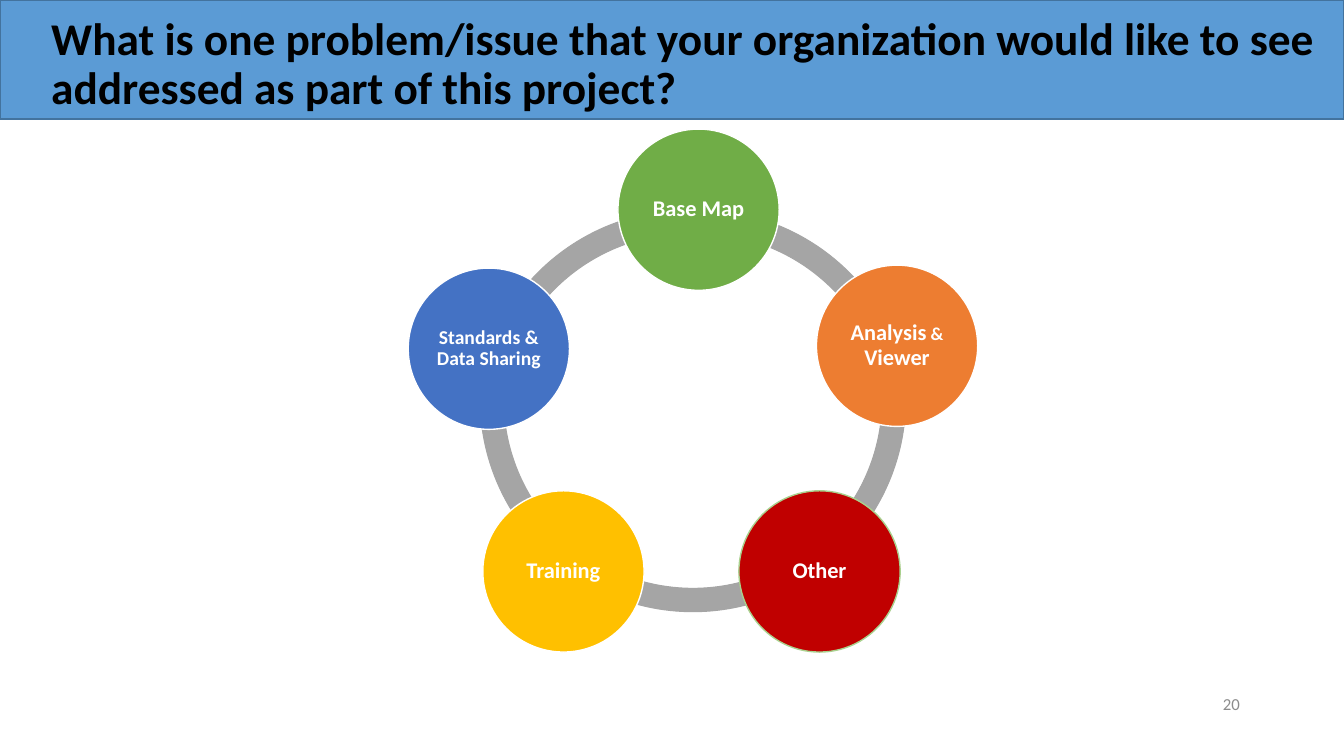
"""Build a slide with a ring of five project topics under a title band."""
from dataclasses import dataclass

from pptx import Presentation
from pptx.dml.color import RGBColor
from pptx.enum.shapes import MSO_SHAPE as Shape
from pptx.enum.text import MSO_ANCHOR as Anchor, PP_ALIGN as Align
from pptx.util import Pt

WHITE = RGBColor(0xFF, 0xFF, 0xFF)
BLACK = RGBColor(0x00, 0x00, 0x00)
GRAY = RGBColor(0x8C, 0x8C, 0x8C)
RING = RGBColor(0xA5, 0xA5, 0xA5)
BAND = RGBColor(0x5B, 0x9B, 0xD5)
BAND_LINE = RGBColor(0x43, 0x73, 0x9E)
ORANGE = RGBColor(0xED, 0x7D, 0x31)
RED = RGBColor(0xC0, 0x00, 0x00)
PALE_GREEN = RGBColor(0xA9, 0xD1, 0x8E)
GOLD = RGBColor(0xFF, 0xC0, 0x00)
BLUE = RGBColor(0x44, 0x72, 0xC4)
GREEN = RGBColor(0x70, 0xAD, 0x47)

RING_RADIUS = 152
RING_THICKNESS = 0.055
TOPIC_SIZE = 115.2


@dataclass
class Arc:
    """A ring segment: centre and clockwise angles in degrees."""
    cx: float
    cy: float
    start: float
    end: float


@dataclass
class Topic:
    """A labelled circle; each run is a text and its size."""
    left: float
    top: float
    fill: RGBColor
    runs: list[tuple[str, float]]
    line: RGBColor = WHITE


ARCS = [
    Arc(495, 285, 140, 180),
    Arc(495, 285, 65, 115),
    Arc(495, 285, 0, 40),
    Arc(499, 302, 285, 322),
    Arc(492, 302, 218, 255),
]
TOPICS = [
    Topic(583.2, 189.4, ORANGE, [("Analysis", 16), (" & ", 13), ("Viewer", 16)]),
    Topic(527.8, 350.6, RED, [("Other", 16)], PALE_GREEN),
    Topic(344.9, 350.6, GOLD, [("Training", 16)]),
    Topic(291.6, 191.5, BLUE, [("Standards & Data Sharing", 14)]),
    Topic(441.4, 92.2, GREEN, [("Base Map", 16)]),
]


def set_attrs(obj, values: dict) -> None:
    """Set every named attribute on an object."""
    for name, value in values.items():
        setattr(obj, name, value)


def add_shape(s, kind, box: tuple, fill: RGBColor, line: RGBColor, width: float):
    """Add a filled and outlined preset shape."""
    sp = s.shapes.add_shape(kind, *map(Pt, box))
    sp.shadow.inherit = False
    sp.fill.solid()
    sp.fill.fore_color.rgb = fill
    sp.line.color.rgb = line
    sp.line.width = Pt(width)
    return sp


def write(sp, runs: list, color: RGBColor, bold: bool, frame: dict, para: dict) -> None:
    """Write one paragraph of runs into a shape."""
    tf = sp.text_frame
    set_attrs(tf, {"word_wrap": True, "vertical_anchor": Anchor.MIDDLE, **frame})
    p = tf.paragraphs[0]
    set_attrs(p, para)
    for text, size in runs:
        r = p.add_run()
        r.text = text
        set_attrs(r.font, {"name": "Calibri", "size": Pt(size), "bold": bold})
        r.font.color.rgb = color


def add_text(s, box: tuple, text: str, size: float, color: RGBColor, bold: bool, para: dict) -> None:
    """Add a text box with one run."""
    sp = s.shapes.add_textbox(*map(Pt, box))
    write(sp, [(text, size)], color, bold, {}, para)


def add_arc(s, arc: Arc) -> None:
    """Add one segment of the ring."""
    size = 2 * RING_RADIUS
    box = (arc.cx - RING_RADIUS, arc.cy - RING_RADIUS, size, size)
    sp = add_shape(s, Shape.BLOCK_ARC, box, RING, RING, 0.75)
    for i, value in enumerate((arc.start * 0.6, arc.end * 0.6, RING_THICKNESS)):
        sp.adjustments[i] = value


def add_topic(s, topic: Topic) -> None:
    """Add one labelled circle."""
    box = (topic.left, topic.top, TOPIC_SIZE, TOPIC_SIZE)
    sp = add_shape(s, Shape.OVAL, box, topic.fill, topic.line, 1)
    margins = {f"margin_{side}": Pt(1.4) for side in ("left", "top", "right", "bottom")}
    write(sp, topic.runs, WHITE, True, margins,
          {"alignment": Align.CENTER, "line_spacing": 0.9})


def main() -> None:
    """Build and save the slide."""
    prs = Presentation()
    set_attrs(prs, {"slide_width": Pt(960), "slide_height": Pt(540)})
    s = prs.slides.add_slide(prs.slide_layouts[6])
    add_text(s, (854.6, 488.2, 38.2, 28.8), "20", 12, GRAY, False,
             {"alignment": Align.RIGHT})
    add_shape(s, Shape.RECTANGLE, (0, 0, 960, 85), BAND, BAND_LINE, 1)
    add_text(s, (29.5, 7.9, 919.4, 77),
             "What is one problem/issue that your organization would like to see "
             "addressed as part of this project?",
             32.4, BLACK, True, {"alignment": Align.LEFT, "line_spacing": 0.9})
    for arc in ARCS:
        add_arc(s, arc)
    for topic in TOPICS:
        add_topic(s, topic)
    prs.save("out.pptx")


if __name__ == "__main__":
    main()
